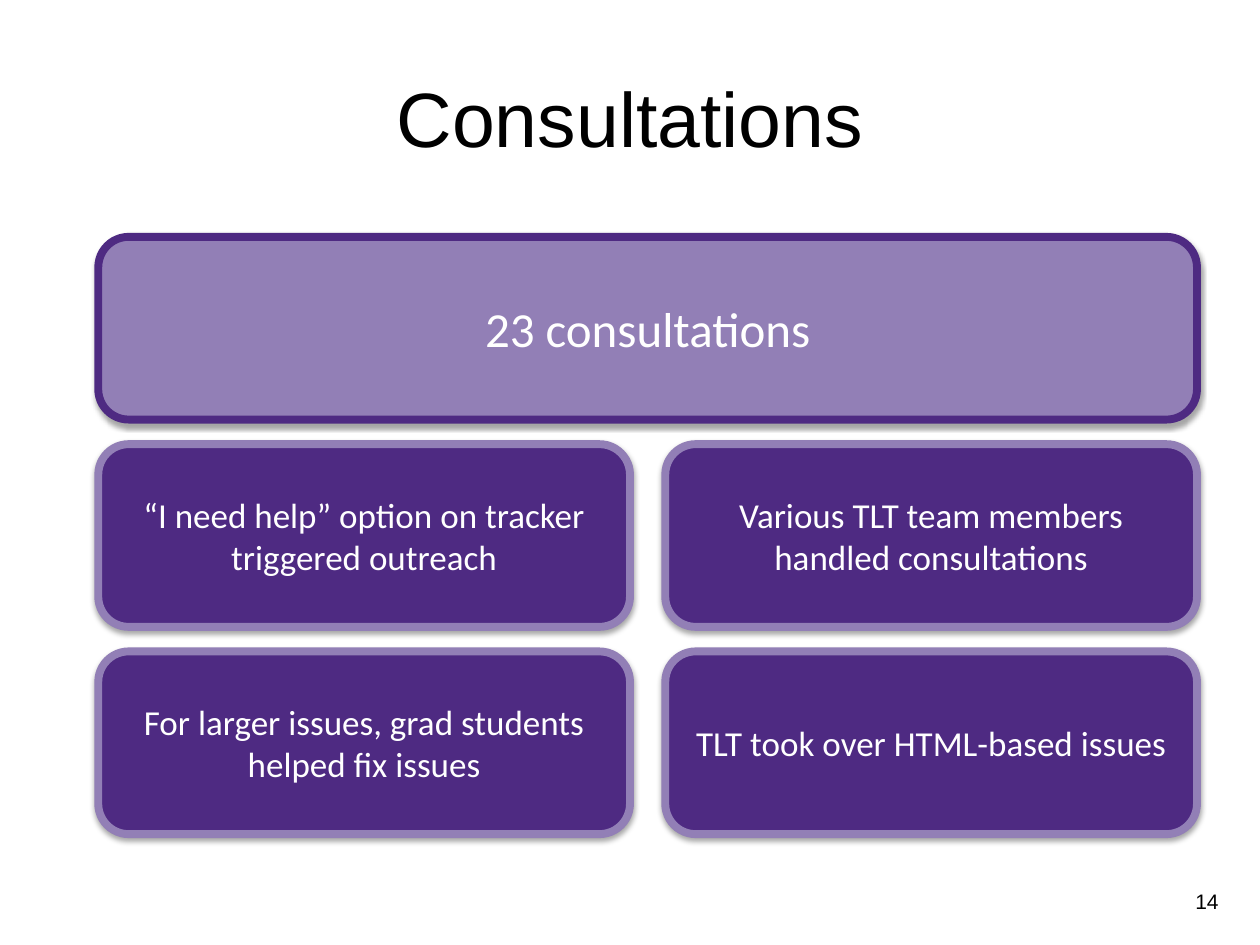
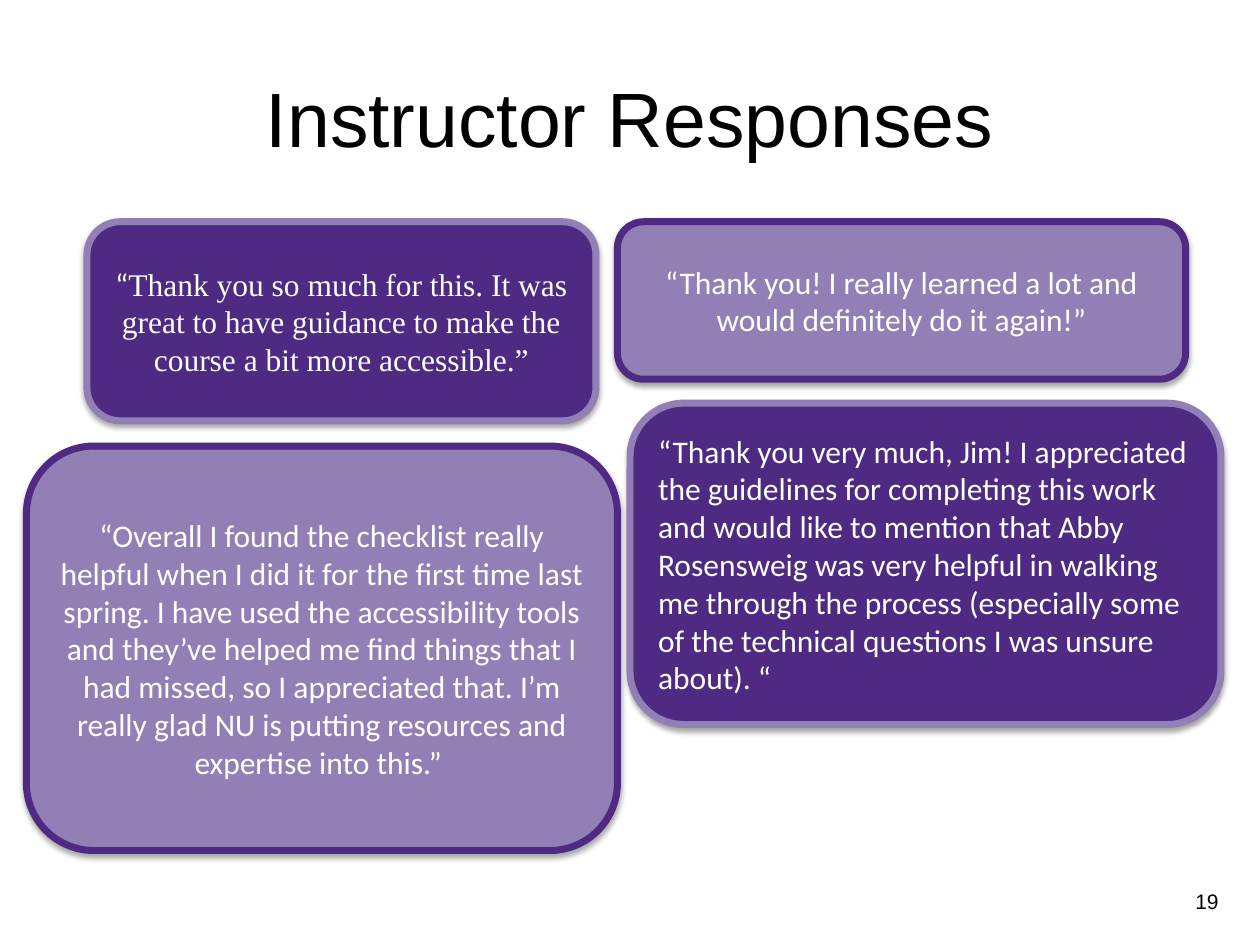
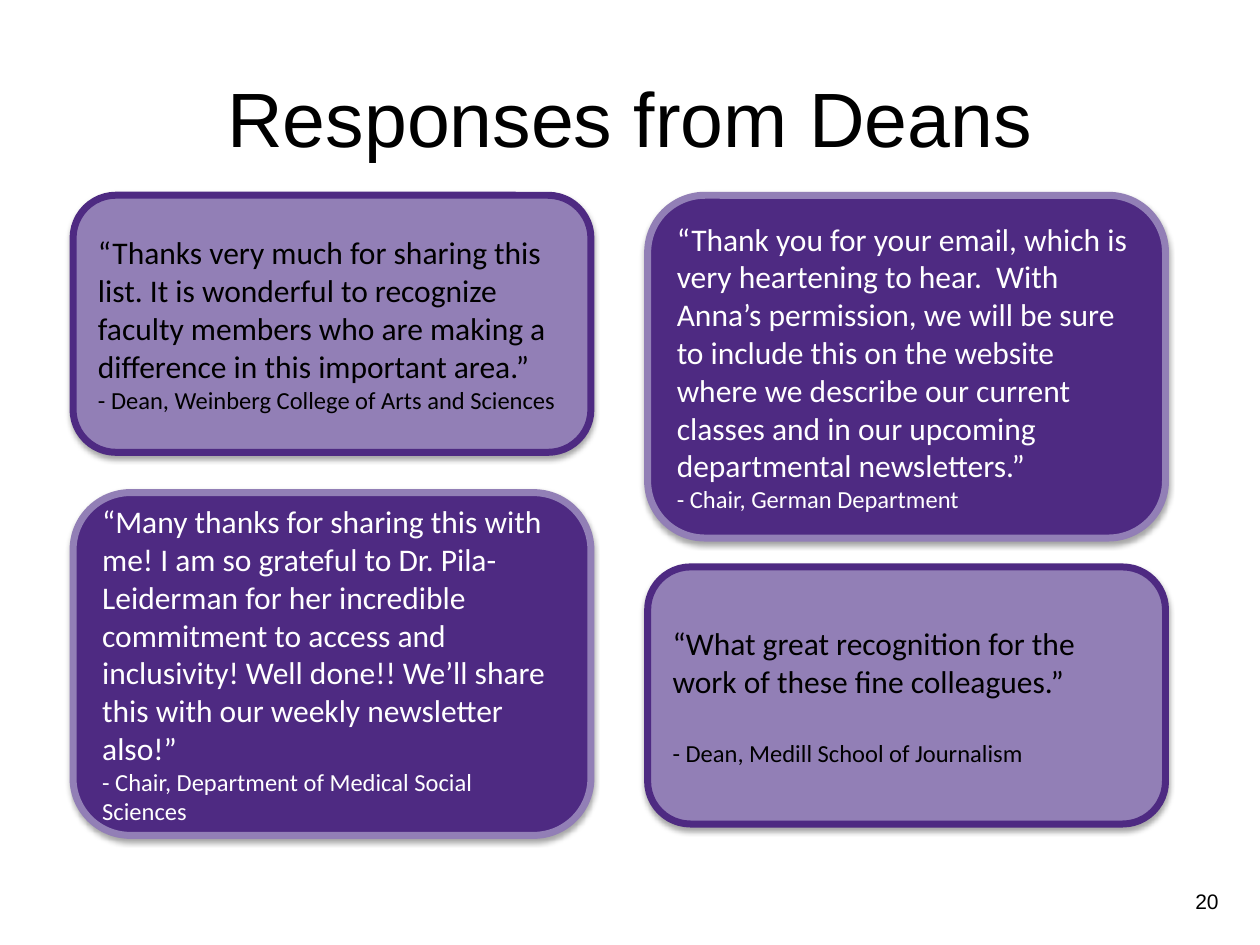
from lxml import etree
from pptx import Presentation
from pptx.dml.color import RGBColor
from pptx.enum.shapes import MSO_SHAPE
from pptx.enum.text import MSO_ANCHOR, PP_ALIGN
from pptx.oxml.ns import qn
from pptx.util import Inches, Pt

LEFT, CENTER, RIGHT = PP_ALIGN.LEFT, PP_ALIGN.CENTER, PP_ALIGN.RIGHT
MIDDLE = MSO_ANCHOR.MIDDLE
ROUNDED = MSO_SHAPE.ROUNDED_RECTANGLE
TITLE_ONLY = 5
COLS, ROWS = 100, 75

COLORS = {
    "dark": "4E2A82",
    "light": "927FB6",
    "white": "FFFFFF",
    "black": "000000",
}
HEAD_FONT, CARD_FONT, SERIF_FONT = "Arial", "Calibri", "Times New Roman"
BLANK_LINE = 22


def rgb(name):
    return RGBColor.from_string(COLORS[name])


class Deck:
    """Holds the shared style and the current slide; lengths are grid units."""

    def __init__(self):
        self.prs = Presentation()
        self.prs.slide_width, self.prs.slide_height = Inches(10), Inches(7.5)
        self.s = None

    def box(self, left, top, width, height):
        col, row = self.prs.slide_width / COLS, self.prs.slide_height / ROWS
        return [round(n) for n in (left * col, top * row, width * col, height * row)]

    def add_run(self, p, text, size, font, color):
        r = p.add_run()
        r.text = text
        r.font.size, r.font.name = Pt(size), font
        r.font.color.rgb = rgb(color)

    def slide(self, title, number):
        self.s = self.prs.slides.add_slide(self.prs.slide_layouts[TITLE_ONLY])
        sp = self.s.shapes.title
        sp.left, sp.top, sp.width, sp.height = self.box(5, 3, 90, 12.5)
        self.fill_text(sp, [[(title, 44, HEAD_FONT)]], "black", CENTER)
        sp = self.s.shapes.add_textbox(*self.box(91.2, 69.5, 6.5, 4))
        self.fill_text(sp, [[(str(number), 12, HEAD_FONT)]], "black", RIGHT)

    def fill_text(self, sp, paragraphs, color, align, gap=0):
        tf = sp.text_frame
        tf.word_wrap, tf.vertical_anchor = True, MIDDLE
        for i, runs in enumerate(paragraphs):
            p = tf.add_paragraph() if i else tf.paragraphs[0]
            p.alignment = align
            if i and gap:
                p.space_before = Pt(gap)
            for text, size, font in runs:
                self.add_run(p, text, size, font, color)

    def add_shadow(self, sp):
        sp.shadow.inherit = False
        effects = sp._element.spPr.find(qn("a:effectLst"))
        outer = etree.SubElement(effects, qn("a:outerShdw"), blurRad=str(Pt(3.1)),
                                 dist=str(Pt(1.8)), dir="5400000", rotWithShape="0")
        tint = etree.SubElement(outer, qn("a:srgbClr"), val=COLORS["black"])
        etree.SubElement(tint, qn("a:alpha"), val="35000")

    def card(self, place, paragraphs, fill, color="white", align=CENTER, line=4, gap=0):
        """Rounded box whose border takes the purple that its fill does not."""
        sp = self.s.shapes.add_shape(ROUNDED, *self.box(*place))
        sp.fill.solid()
        sp.fill.fore_color.rgb = rgb(fill)
        sp.line.color.rgb = rgb("light" if fill == "dark" else "dark")
        sp.line.width = Pt(line)
        self.add_shadow(sp)
        self.fill_text(sp, paragraphs, color, align, gap)

    def quote(self, place, text, fill, align=CENTER):
        self.card(place, [[(text, 18, CARD_FONT)]], fill, align=align)

    def signed_quote(self, place, text, signature, fill, gap=0):
        color = "white" if fill == "dark" else "black"
        self.card(place, [[(text, 18, CARD_FONT)], [(signature, 14, CARD_FONT)]],
                  fill, color, LEFT, gap=gap)


def consultations(deck):
    deck.slide("Consultations", 14)
    left, top, width, height = 7.8, 18.8, 42.2, 14.5
    col_step, row_step = 45, 16.45
    deck.card((left, top, col_step + width, height),
              [[("23 consultations", 28, CARD_FONT)]], "light", line=4.5)
    details = [
        "“I need help” option on tracker triggered outreach",
        "Various TLT team members handled consultations",
        "For larger issues, grad students helped fix issues",
        "TLT took over HTML-based issues",
    ]
    for i, text in enumerate(details):
        row, col = divmod(i, 2)
        place = (left + col * col_step, top + (row + 1) * row_step, width, height)
        deck.card(place, [[(text, 20, CARD_FONT)]], "dark", line=4.5)


def instructor_responses(deck):
    deck.slide("Instructor Responses", 19)
    guidance = ("Thank you so much for this. It was great to have guidance to make "
                "the course a bit more accessible.”")
    deck.card((6.9, 17.6, 40.4, 15.8),
              [[("“", 18, CARD_FONT), (guidance, 18, SERIF_FONT)]], "dark")
    deck.quote((49, 17.6, 45.1, 12.5),
               "“Thank you! I really learned a lot and would definitely do it again!”",
               "light")
    deck.quote((50, 32, 46.9, 25.5),
               "“Thank you very much, Jim! I appreciated the guidelines for completing "
               "this work and would like to mention that Abby Rosensweig was very "
               "helpful in walking me through the process (especially some of the "
               "technical questions I was unsure about). “", "dark", LEFT)
    deck.quote((2.1, 35.4, 46.9, 32.1),
               "“Overall I found the checklist really helpful when I did it for the "
               "first time last spring. I have used the accessibility tools and they’ve "
               "helped me find things that I had missed, so I appreciated that. I’m "
               "really glad NU is putting resources and expertise into this.” ", "light")


def dean_responses(deck):
    deck.slide("Responses from Deans", 20)
    left, right, width = 5.8, 51.4, 41.1
    top, short, tall = 15.5, 20.4, 27.2
    deck.signed_quote((left, top, width, short),
                      "“Thanks very much for sharing this list. It is wonderful to "
                      "recognize faculty members who are making a difference in this "
                      "important area.”",
                      "- Dean, Weinberg College of Arts and Sciences", "light")
    deck.signed_quote((right, top, width, tall),
                      "“Thank you for your email, which is very heartening to hear.  "
                      "With Anna’s permission, we will be sure to include this on the "
                      "website where we describe our current classes and in our upcoming "
                      "departmental newsletters.”",
                      "- Chair, German Department", "dark")
    deck.signed_quote((left, 39.1, width, tall),
                      "“Many thanks for sharing this with me! I am so grateful to Dr. "
                      "Pila-Leiderman for her incredible commitment to access and "
                      "inclusivity! Well done!! We’ll share this with our weekly "
                      "newsletter also!”",
                      "- Chair, Department of Medical Social Sciences", "dark")
    deck.signed_quote((right, 45, width, short),
                      "“What great recognition for the work of these fine colleagues.”",
                      "- Dean, Medill School of Journalism", "light", BLANK_LINE)


def main():
    deck = Deck()
    consultations(deck)
    instructor_responses(deck)
    dean_responses(deck)
    deck.prs.save("out.pptx")


if __name__ == "__main__":
    main()
